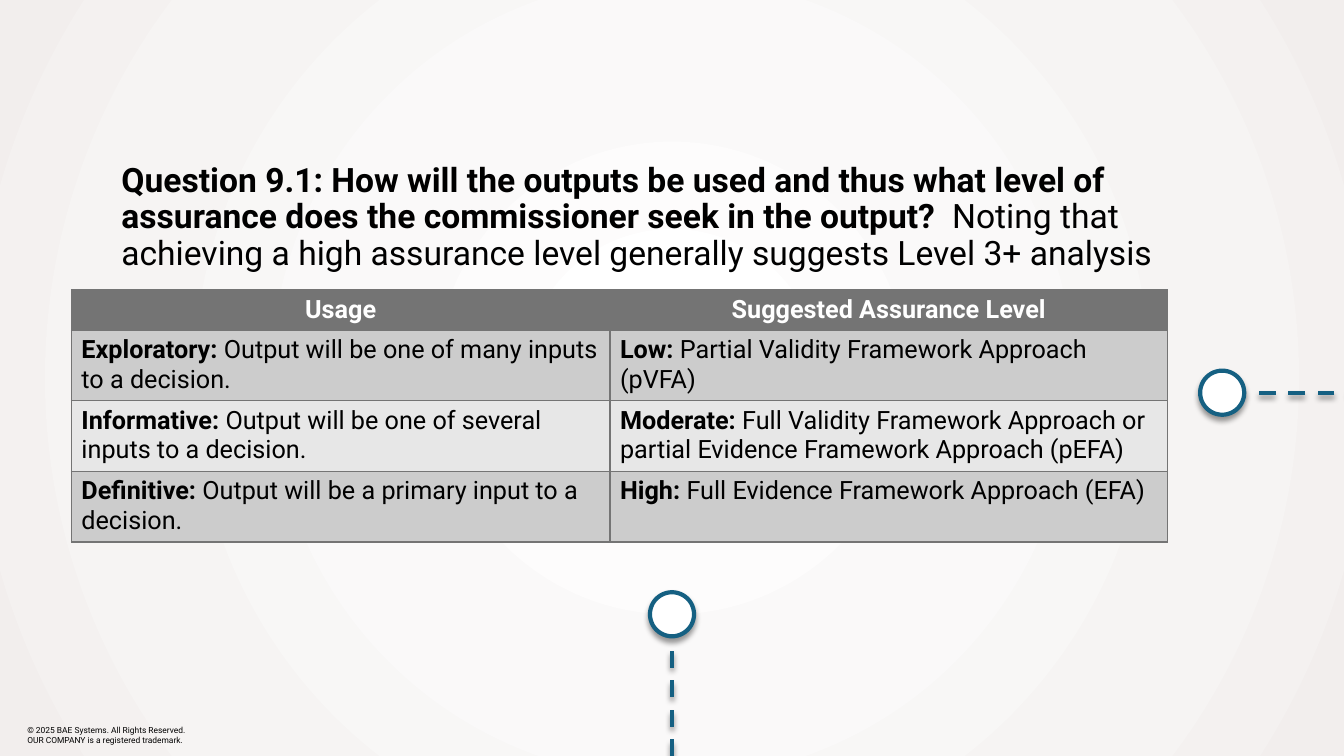
from pptx import Presentation
from pptx.dml.color import RGBColor
from pptx.enum.dml import MSO_LINE
from pptx.enum.shapes import MSO_CONNECTOR, MSO_SHAPE
from pptx.enum.text import MSO_ANCHOR, MSO_AUTO_SIZE, PP_ALIGN
from pptx.oxml import parse_xml
from pptx.oxml.ns import nsdecls
from pptx.util import Pt

PX = 9525
WIDE, HIGH = 1280, 720
BLUE, GREY = "156082", "747474"
DOT = 42
STOPS = [(8, "FFFFFF"), (42, "FAF9F9"), (72, "F6F4F3"), (100, "F2EEED")]
ASK = [
    ("Question 9.1: How will the outputs be used and thus what level of "
     "assurance does the commissioner seek in the output?  ", True),
    ("Noting that achieving a high assurance level generally suggests "
     "Level 3+ analysis", False),
]
HEADS = ["Usage", "Suggested Assurance Level"]
ROWS = [
    [("Exploratory: ", "Output will be one of many inputs to a decision."),
     ("Low: ", "Partial Validity Framework Approach (pVFA)")],
    [("Informative: ", "Output will be one of several inputs to a decision."),
     ("Moderate: ", "Full Validity Framework Approach or partial Evidence "
      "Framework Approach (pEFA)")],
    [("Definitive: ", "Output will be a primary input to a decision."),
     ("High: ", "Full Evidence Framework Approach (EFA)")],
]
RIGHTS = ["© 2025 BAE Systems. All Rights Reserved.",
          "OUR COMPANY is a registered trademark."]


def px(*nums):
    return [num * PX for num in nums]


def tint(code):
    return RGBColor.from_string(code)


def write(frame, paras, size=18, color="000000", align=PP_ALIGN.LEFT, lead=1.0):
    for num, runs in enumerate(paras):
        para = frame.add_paragraph() if num else frame.paragraphs[0]
        para.alignment = align
        para.line_spacing = lead
        para.space_before = Pt(0)
        for words, bold in runs:
            run = para.add_run()
            run.text = words
            run.font.name = "Roboto"
            run.font.size = Pt(size)
            run.font.bold = bold
            run.font.color.rgb = tint(color)


def paint(slide):
    stops = "".join(
        f'<a:gs pos="{pos * 1000}"><a:srgbClr val="{code}"/></a:gs>'
        for pos, code in STOPS)
    back = parse_xml(
        f'<p:bg {nsdecls("p", "a")}><p:bgPr><a:gradFill rotWithShape="1">'
        f'<a:gsLst>{stops}</a:gsLst><a:path path="circle">'
        '<a:fillToRect l="50000" t="50000" r="50000" b="50000"/></a:path>'
        '</a:gradFill><a:effectLst/></p:bgPr></p:bg>')
    slide.element.cSld.insert(0, back)


def shade(shape):
    shape.element.spPr.append(parse_xml(
        f'<a:effectLst {nsdecls("a")}>'
        f'<a:outerShdw blurRad="{Pt(4)}" dist="{Pt(3)}" dir="5400000" '
        'rotWithShape="0"><a:srgbClr val="000000"><a:alpha val="40000"/>'
        '</a:srgbClr></a:outerShdw></a:effectLst>'))


def stroke(shape):
    shape.line.color.rgb = tint(BLUE)
    shape.line.width = Pt(3)


def add_dash(slide, *ends):
    dash = slide.shapes.add_connector(MSO_CONNECTOR.STRAIGHT, *px(*ends))
    stroke(dash)
    dash.line.dash_style = MSO_LINE.DASH
    shade(dash)


def add_dot(slide, left, top):
    dot = slide.shapes.add_shape(MSO_SHAPE.OVAL, *px(left, top, DOT, DOT))
    dot.fill.solid()
    dot.fill.fore_color.rgb = tint("FFFFFF")
    stroke(dot)
    shade(dot)


def edge(cell):
    props = cell._tc.get_or_add_tcPr()
    for spot, side in enumerate("LRTB"):
        props.insert(spot, parse_xml(
            f'<a:ln{side} {nsdecls("a")} w="{Pt(1)}"><a:solidFill>'
            f'<a:srgbClr val="{GREY}"/></a:solidFill></a:ln{side}>'))


def add_grid(slide):
    wides, highs = [513, 531], [38, 66, 66, 66]
    grid = slide.shapes.add_table(
        len(highs), len(wides), *px(68, 276, sum(wides), sum(highs))).table
    for col, wide in zip(grid.columns, px(*wides)):
        col.width = wide
    for row, high in zip(grid.rows, px(*highs)):
        row.height = high
    for num, row in enumerate([HEADS] + ROWS):
        for col, item in enumerate(row):
            cell = grid.cell(num, col)
            cell.fill.solid()
            if num == 0:
                fill = GREY
                write(cell.text_frame, [[(item, True)]], color="FFFFFF",
                      align=PP_ALIGN.CENTER)
            else:
                fill = "CCCCCC" if num % 2 else "E7E7E7"
                write(cell.text_frame, [list(zip(item, (True, False)))])
            cell.fill.fore_color.rgb = tint(fill)
            edge(cell)


def add_title(slide):
    title = slide.shapes.title
    title.left, title.top, title.width, title.height = px(106, 151, 1050, 76)
    frame = title.text_frame
    frame.word_wrap = True
    frame.auto_size = MSO_AUTO_SIZE.NONE
    frame.vertical_anchor = MSO_ANCHOR.TOP
    write(frame, [ASK], size=24, lead=0.9)


def add_note(slide):
    frame = slide.shapes.add_textbox(*px(26, 685, 172, 31)).text_frame
    frame.word_wrap = True
    frame.vertical_anchor = MSO_ANCHOR.MIDDLE
    frame.margin_left = frame.margin_right = 0
    frame.margin_top = frame.margin_bottom = 0
    write(frame, [[(words, False)] for words in RIGHTS], size=6)


def main():
    deck = Presentation()
    deck.slide_width, deck.slide_height = px(WIDE, HIGH)
    slide = deck.slides.add_slide(deck.slide_layouts[5])
    paint(slide)
    add_note(slide)
    add_dash(slide, 1299, 374, 1185, 374)
    add_dot(slide, 1143, 353)
    add_grid(slide)
    add_dash(slide, 640, HIGH, 640, 608)
    add_dot(slide, 619, 564)
    add_title(slide)
    deck.save("out.pptx")


if __name__ == "__main__":
    main()
